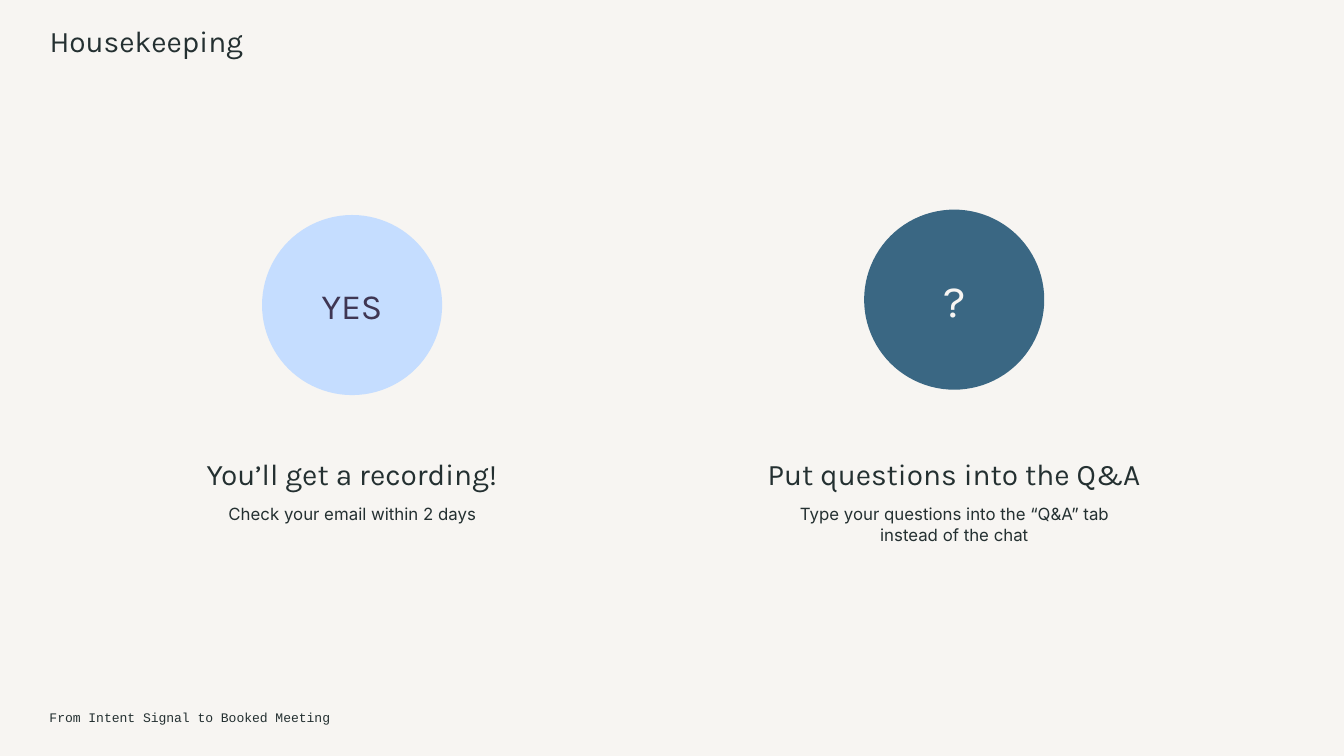
import pptx
import pptx.dml.color
import pptx.enum.shapes
import pptx.enum.text
import pptx.util

COLORS = {
    "paper": "F7F5F2",
    "ink": "243031",
    "sky": "C5DDFF",
    "plum": "3F3653",
    "teal": "3A6783",
}
SLIDE_WIDTH = pptx.util.Inches(10)
SLIDE_HEIGHT = SLIDE_WIDTH * 9 // 16
CELL = SLIDE_WIDTH / 100
CARD_TOP, CARD_HEIGHT = 15.6, 25.7
CIRCLE_SIZE = 13.4
CENTER = pptx.enum.text.PP_ALIGN.CENTER
LEFT = pptx.enum.text.PP_ALIGN.LEFT


def color(name):
    return pptx.dml.color.RGBColor.from_string(COLORS[name])


def grid(*cells):
    return [round(cell * CELL) for cell in cells]


def write(shape, text, size, font, ink="ink", align=CENTER,
          anchor=pptx.enum.text.MSO_ANCHOR.TOP):
    frame = shape.text_frame
    frame.text = text
    frame.word_wrap = True
    frame.auto_size = pptx.enum.text.MSO_AUTO_SIZE.NONE
    frame.vertical_anchor = anchor
    frame.margin_left = frame.margin_right = round(CELL)
    frame.margin_top = frame.margin_bottom = round(CELL)
    para = frame.paragraphs[0]
    para.alignment = align
    span = para.runs[0]
    span.font.size = pptx.util.Pt(size)
    span.font.name = font
    span.font.color.rgb = color(ink)
    return para


def add_title(page, box, text):
    para = write(page.shapes.add_textbox(*grid(*box)), text, 16, "Karla", align=LEFT)
    para.line_spacing = 0.9


def add_footer(page, box, text):
    write(page.shapes.add_textbox(*grid(*box)), text, 7, "Courier New", align=LEFT)


def add_card(page, box, badge, heading, detail):
    left, top, width, height = box
    label, label_size, fill, ink, drop = badge
    circle = page.shapes.add_shape(
        pptx.enum.shapes.MSO_SHAPE.OVAL,
        *grid(left + (width - CIRCLE_SIZE) / 2, top + drop, CIRCLE_SIZE, CIRCLE_SIZE))
    circle.shadow.inherit = False
    circle.fill.solid()
    circle.fill.fore_color.rgb = color(fill)
    circle.line.fill.background()
    write(circle, label, label_size, "Karla", ink,
          anchor=pptx.enum.text.MSO_ANCHOR.MIDDLE)

    heading_box = page.shapes.add_textbox(*grid(left, top + 17.3, width, 2.9))
    write(heading_box, heading, 16, "Karla")
    detail_width = 27.4
    detail_box = page.shapes.add_textbox(
        *grid(left + (width - detail_width) / 2, top + height - 4.8, detail_width, 4.8))
    write(detail_box, detail, 9, "Inter")


def main():
    deck = pptx.Presentation()
    deck.slide_width, deck.slide_height = SLIDE_WIDTH, SLIDE_HEIGHT
    page = deck.slides.add_slide(deck.slide_layouts[6])
    page.background.fill.solid()
    page.background.fill.fore_color.rgb = color("paper")

    add_title(page, (2.7, 1, 66.1, 8.7), "Housekeeping")
    add_footer(page, (2.7, 51.8, 33.6, 2.3), "From Intent Signal to Booked Meeting")
    add_card(page, (11.6, CARD_TOP, 29.2, CARD_HEIGHT),
             ("YES", 19, "sky", "plum", 0.4),
             "You’ll get a recording!", "Check your email within 2 days")
    add_card(page, (55.2, CARD_TOP, 31.6, CARD_HEIGHT),
             ("?", 24, "teal", "paper", 0),
             "Put questions into the Q&A",
             "Type your questions into the “Q&A” tab instead of the chat")
    deck.save("out.pptx")


if __name__ == "__main__":
    main()
